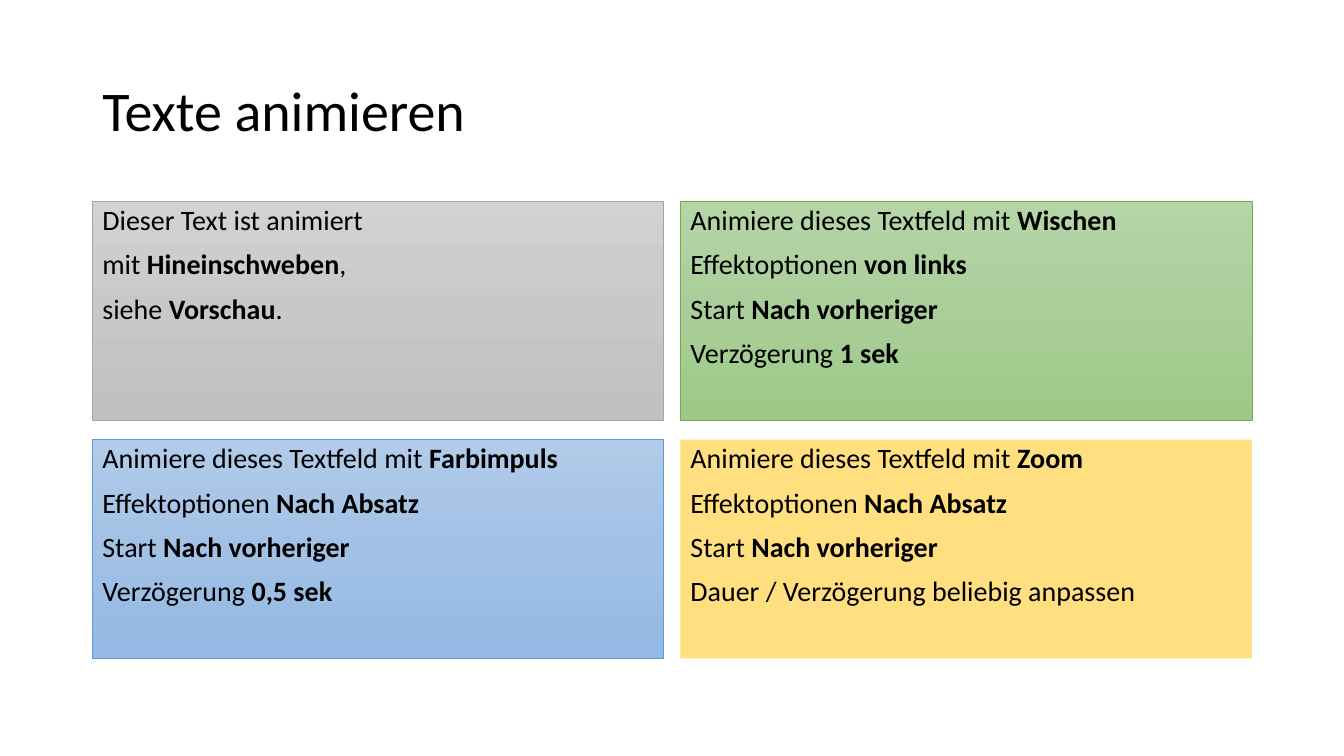
from copy import deepcopy

from lxml.etree import SubElement
from pptx import Presentation
from pptx.dml.color import RGBColor
from pptx.enum.shapes import MSO_SHAPE
from pptx.enum.text import MSO_ANCHOR, PP_ALIGN
from pptx.oxml.ns import qn
from pptx.util import Cm, Pt

COLORS = {
    "text": "000000",
    "grey": ["D2D2D2", "C8C8C8", "C0C0C0"],
    "grey line": "A5A5A5",
    "green": ["B5D5A7", "AACE9A", "9CC987"],
    "green line": "70AD47",
    "blue": ["B1CBE9", "A3C1E5", "93B9E4"],
    "blue line": "5B9BD5",
    "yellow": "FFC000",
}


def write(shape, lines, size, anchor=MSO_ANCHOR.TOP, before=0):
    """Write one paragraph per line; words between asterisks are bold."""
    frame = shape.text_frame
    frame.word_wrap = True
    frame.vertical_anchor = anchor
    for i, line in enumerate(lines):
        paragraph = frame.paragraphs[0] if i == 0 else frame.add_paragraph()
        paragraph.alignment = PP_ALIGN.LEFT
        paragraph.line_spacing = 0.9
        paragraph.space_before = Pt(before)
        for j, part in enumerate(line.split("*")):
            if part:
                run = paragraph.add_run()
                run.text = part
                run.font.name = "Calibri"
                run.font.size = Pt(size)
                run.font.bold = j % 2 == 1
                run.font.color.rgb = RGBColor.from_string(COLORS["text"])


def fill_gradient(shape, colors):
    """Fill from top to bottom with three evenly spaced colours."""
    shape.fill.gradient()
    shape.fill.gradient_angle = 270
    stop_list = shape.element.spPr.find(qn("a:gradFill")).find(qn("a:gsLst"))
    stop_list.insert(1, deepcopy(stop_list[0]))
    for i, stop in enumerate(shape.fill.gradient_stops):
        stop.position = i / 2
        stop.color.rgb = RGBColor.from_string(colors[i])


presentation = Presentation()
presentation.slide_width, presentation.slide_height = Cm(33.87), Cm(19.05)
slide = presentation.slides.add_slide(presentation.slide_layouts[6])

title = slide.shapes.add_textbox(Cm(2.33), Cm(1.01), Cm(29.21), Cm(3.68))
write(title, ["Texte animieren"], 40, anchor=MSO_ANCHOR.MIDDLE)

exercises = [
    ("grey", ["Dieser Text ist animiert", "mit *Hineinschweben*,", "siehe *Vorschau*."]),
    ("green", ["Animiere dieses Textfeld mit *Wischen*", "Effektoptionen *von links*",
               "Start *Nach vorheriger*", "Verzögerung *1 sek*"]),
    ("blue", ["Animiere dieses Textfeld mit *Farbimpuls*", "Effektoptionen *Nach Absatz*",
              "Start *Nach vorheriger*", "Verzögerung *0,5 sek*"]),
    ("yellow", ["Animiere dieses Textfeld mit *Zoom*", "Effektoptionen *Nach Absatz*",
                "Start *Nach vorheriger*", "Dauer / Verzögerung beliebig anpassen"]),
]
for i, (color, lines) in enumerate(exercises):
    row, column = divmod(i, 2)
    field = slide.shapes.add_shape(
        MSO_SHAPE.RECTANGLE, Cm(2.33 + 14.82 * column), Cm(5.08 + 6 * row), Cm(14.4), Cm(5.51))
    field.shadow.inherit = False
    if color == "yellow":
        field.fill.solid()
        field.fill.fore_color.rgb = RGBColor.from_string(COLORS[color])
        yellow = field.element.spPr.find(qn("a:solidFill"))[0]
        SubElement(yellow, qn("a:alpha"), val="50000")
        field.line.fill.background()
    else:
        fill_gradient(field, COLORS[color])
        field.line.color.rgb = RGBColor.from_string(COLORS[color + " line"])
        field.line.width = Pt(0.5)
    write(field, lines, 20, before=10)

presentation.save("out.pptx")
